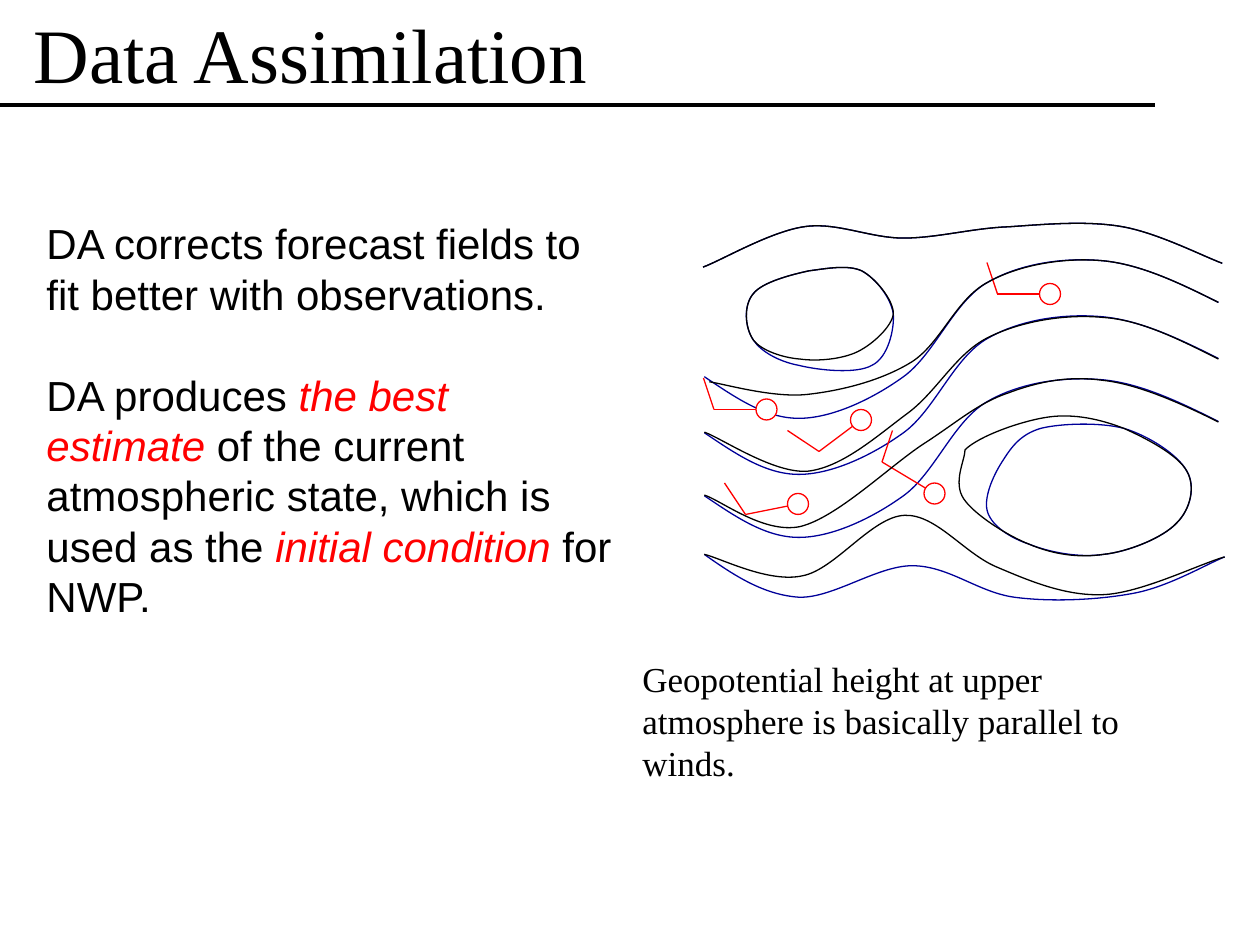
from lxml import etree
from pptx import Presentation
from pptx.dml.color import RGBColor
from pptx.enum.shapes import MSO_CONNECTOR, MSO_SHAPE
from pptx.enum.text import MSO_ANCHOR, PP_ALIGN
from pptx.oxml.ns import qn
from pptx.util import Pt

LINE, OVAL = MSO_CONNECTOR.STRAIGHT, MSO_SHAPE.OVAL
MIDDLE, TOP, LEFT = MSO_ANCHOR.MIDDLE, MSO_ANCHOR.TOP, PP_ALIGN.LEFT
BLACK = RGBColor(0, 0, 0)
WHITE = RGBColor(255, 255, 255)
RED = RGBColor(255, 0, 0)
BLUE = RGBColor(0, 0, 153)
SANS, SERIF = "Arial", "Times New Roman"

# Text: paragraphs made of (words, stressed) runs
TITLE = [[("Data Assimilation", False)]]
BODY = [
    [("DA corrects forecast fields to fit better with observations.", False)],
    [("DA produces ", False), ("the best estimate", True),
     (" of the current atmospheric state, which is used as the ", False),
     ("initial condition ", True), ("for NWP.", False)],
]
NOTE = [[("Geopotential height at upper atmosphere is basically parallel "
          "to winds.", False)]]

# Contours: a start, then Bezier triples, in hundredths of an inch
UNIT = 0.72
CREST = [(558, 212), (572, 207), (611, 184), (638, 180), (664, 176),
         (690, 189), (717, 189), (744, 189), (772, 181), (801, 180),
         (830, 178), (863, 175), (891, 180), (919, 185), (954, 203),
         (970, 209)]
WAVE = [(559, 299), (583, 315), (607, 332), (634, 332), (660, 332),
        (692, 317), (717, 299), (742, 281), (757, 239), (784, 224),
        (810, 209), (845, 204), (876, 207), (906, 210), (937, 225),
        (967, 240)]
DROPS = (0, 94.5, 44.5)  # the first guess repeats one wave, moved down

GUESS = [[(x, y + drop) for x, y in WAVE] for drop in DROPS] + [
    # low and high
    [(795, 367), (802, 356), (809, 345), (826, 340), (842, 336), (873, 335),
     (892, 340), (912, 346), (935, 361), (942, 374), (949, 386), (945, 404),
     (934, 415), (923, 427), (895, 438), (876, 440), (856, 443), (832, 438),
     (817, 432), (802, 427), (788, 418), (784, 407), (780, 396), (788, 378),
     (795, 367)],
    [(598, 270), (604, 279), (618, 287), (634, 290), (650, 294), (680, 297),
     (692, 290), (705, 284), (710, 261), (709, 249), (707, 236), (695, 221),
     (684, 215), (673, 210), (657, 213), (642, 215), (628, 218), (605, 224),
     (598, 233), (590, 242), (591, 260), (598, 270)],
    # bottom line
    [(559, 440), (583, 457), (606, 472), (634, 474), (661, 475), (696, 449),
     (724, 449), (753, 449), (776, 470), (805, 474), (835, 478), (872, 476),
     (899, 471), (927, 466), (957, 448), (972, 442)],
    CREST,
]
FIXED = [
    # three waves
    [(563, 303), (576, 305), (614, 316), (641, 313), (668, 310), (700, 302),
     (724, 287), (747, 272), (759, 237), (784, 224), (809, 210), (845, 204),
     (876, 207), (906, 210), (937, 225), (967, 240)],
    [(559, 393), (572, 397), (606, 424), (635, 418), (664, 411), (705, 371),
     (732, 353), (760, 335), (776, 320), (800, 312), (824, 303), (848, 298),
     (876, 302), (903, 305), (937, 320), (967, 335)],
    [(559, 343), (573, 348), (614, 376), (641, 374), (668, 371), (695, 347),
     (719, 329), (743, 312), (758, 281), (784, 268), (810, 255), (845, 249),
     (876, 252), (906, 254), (937, 270), (967, 285)],
    # low and high
    [(766, 357), (777, 346), (811, 334), (832, 331), (853, 328), (874, 333),
     (892, 340), (910, 348), (935, 361), (942, 374), (949, 386), (945, 404),
     (934, 415), (923, 427), (895, 438), (876, 440), (856, 443), (836, 440),
     (817, 432), (799, 425), (773, 408), (765, 396), (756, 383), (766, 365),
     (766, 357)],
    [(598, 270), (604, 278), (621, 284), (635, 285), (649, 287), (669, 285),
     (681, 279), (693, 273), (708, 259), (709, 249), (709, 238), (695, 221),
     (684, 215), (673, 210), (657, 213), (642, 215), (628, 218), (605, 224),
     (598, 233), (590, 242), (591, 260), (598, 270)],
    # bottom line
    [(559, 440), (572, 443), (610, 463), (637, 457), (663, 452), (692, 410),
     (718, 409), (743, 408), (765, 439), (791, 450), (817, 461), (845, 473),
     (875, 472), (905, 471), (951, 448), (972, 442)],
    CREST,
]

# Wind barbs in points: station, elbow, tip
BARBS = [
    ((492, 240), (468, 258), (450, 246)),
    ((600, 168), (570, 168), (564, 150)),
    ((534, 282), (504, 264), (510, 246)),
    ((456, 288), (426, 294), (414, 276)),
    ((438, 234), (408, 234), (402, 216)),
]
RADIUS = 6

deck = Presentation()
deck.slide_width, deck.slide_height = Pt(720), Pt(540)
slide = deck.slides.add_slide(deck.slide_layouts[5])
shapes = slide.shapes


def write(box, paras, face, size, anchor=TOP, gap=0):
    frame = box.text_frame
    frame.word_wrap = True
    frame.vertical_anchor = anchor
    for i, runs in enumerate(paras):
        para = frame.add_paragraph() if i else frame.paragraphs[0]
        para.alignment = LEFT
        para.space_before = Pt(gap if i else 0)
        for words, stress in runs:
            run = para.add_run()
            run.text = words
            font = run.font
            font.name, font.size = face, Pt(size)
            font.italic = stress
            font.color.rgb = RED if stress else BLACK


def rule(start, end, color, width=0.75):
    line = shapes.add_connector(LINE, *map(Pt, start + end))
    line.line.color.rgb = color
    line.line.width = Pt(width)
    etree.SubElement(line._element.spPr, qn("a:effectLst"))


def curve(points, color):
    spots = [(Pt(x * UNIT), Pt(y * UNIT)) for x, y in points]
    pen = shapes.build_freeform(*spots[0])
    pen.add_line_segments(spots[1:], close=points[0] == points[-1])
    shape = pen.convert_to_shape()
    shape.shadow.inherit = False
    shape.fill.background()
    shape.line.color.rgb = color
    shape.line.width = Pt(0.75)
    # Each three straight steps become one Bezier step
    steps = list(shape._element.iter(qn("a:lnTo")))
    for i in range(0, len(steps), 3):
        bend = etree.Element(qn("a:cubicBezTo"))
        steps[i].addprevious(bend)
        for step in steps[i:i + 3]:
            bend.append(step[0])
            step.getparent().remove(step)


def barb(hub, elbow, tip):
    rule(hub, elbow, RED)
    x, y = hub
    ring = shapes.add_shape(OVAL, Pt(x - RADIUS), Pt(y - RADIUS),
                            Pt(2 * RADIUS), Pt(2 * RADIUS))
    ring.shadow.inherit = False
    ring.fill.solid()
    ring.fill.fore_color.rgb = WHITE
    ring.line.color.rgb = RED
    ring.line.width = Pt(0.75)
    rule(tip, elbow, RED)


# Title and its rule
title = shapes.title
title.left, title.top, title.width, title.height = map(Pt, (12, 0, 648, 60))
write(title, TITLE, SERIF, 44, MIDDLE)
rule((0, 60), (660, 60), BLACK, 2)

# Weather map
for points in GUESS:
    curve(points, BLUE)
for spots in BARBS:
    barb(*spots)
for points in FIXED:
    curve(points, BLACK)

# Body and note
body = shapes.add_textbox(Pt(19.5), Pt(121), Pt(340.5), Pt(240))
write(body, BODY, SANS, 24, gap=28.8)
note = shapes.add_textbox(Pt(360), Pt(372), Pt(340), Pt(55.5))
write(note, NOTE, SERIF, 20)

deck.save("out.pptx")
